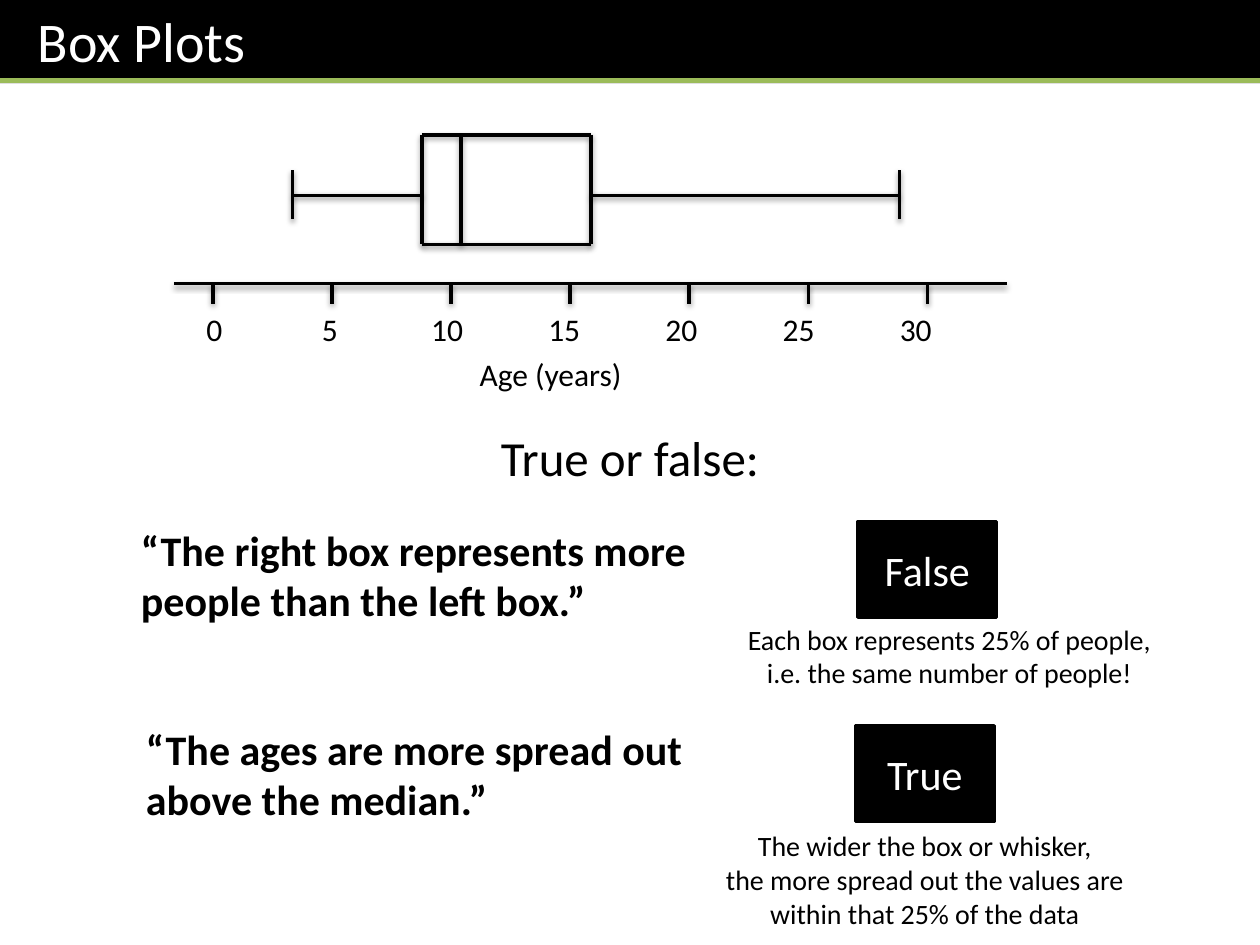
from typing import NamedTuple

from lxml.etree import SubElement
from pptx import Presentation
from pptx.dml.color import RGBColor
from pptx.enum.shapes import MSO_CONNECTOR, MSO_SHAPE
from pptx.enum.text import MSO_ANCHOR, PP_ALIGN
from pptx.oxml.ns import qn
from pptx.util import Inches, Pt

BLACK, WHITE, GREEN = "000000", "FFFFFF", "9BBB59"
AXIS_Y, TICK_BOTTOM = 2.25, 2.41
TICK_LEFT, TICK_STEP = 1.69, 0.945
LABEL_STEP = 0.93
BOX_TOP, BOX_BOTTOM, WHISKER_Y = 1.07, 1.94, 1.55
LOW, Q1, MEDIAN, Q3, HIGH = 2.32, 3.35, 3.66, 4.69, 7.14


class Box(NamedTuple):
    left: float
    top: float
    width: float
    height: float


class Question(NamedTuple):
    claim: str
    claim_box: Box
    answer: str
    answer_box: Box
    reason: str
    reason_box: Box


QUESTIONS = [
    Question("“The right box represents more people than the left box.”",
             Box(1.02, 4.11, 4.69, 0.91),
             "False", Box(6.81, 4.14, 1.1, 0.76),
             "Each box represents 25% of people, i.e. the same number of people!",
             Box(5.75, 4.89, 3.57, 0.64)),
    Question("“The ages are more spread out above the median.”",
             Box(1.06, 5.69, 4.69, 0.91),
             "True", Box(6.79, 5.76, 1.1, 0.76),
             "The wider the box or whisker,\n"
             "the more spread out the values are\n"
             "within that 25% of the data",
             Box(4.75, 6.53, 5.18, 0.91)),
]


def rgb(value: str) -> RGBColor:
    return RGBColor.from_string(value)


def add_line(shapes, x1: float, y1: float, x2: float, y2: float, *,
             color: str = BLACK, width: float = 2, shadow: bool = True):
    line = shapes.add_connector(MSO_CONNECTOR.STRAIGHT, Inches(x1), Inches(y1),
                                Inches(x2), Inches(y2))
    line.line.color.rgb = rgb(color)
    line.line.width = Pt(width)
    effects = SubElement(line._element.spPr, qn("a:effectLst"))
    if shadow:
        outer = SubElement(effects, qn("a:outerShdw"), blurRad=str(Pt(3.1)),
                           dist=str(Pt(1.6)), dir="5400000", rotWithShape="0")
        shade = SubElement(outer, qn("a:srgbClr"), val=BLACK)
        SubElement(shade, qn("a:alpha"), val="38000")
    return line


def add_text(shapes, text: str, box: Box, *, size: float, color: str = BLACK,
             bold: bool = False, align=PP_ALIGN.LEFT, anchor=MSO_ANCHOR.TOP,
             fill: str | None = None, outline: str | None = None,
             inset: float = 0.1):
    """Add text in a plain box, or in a rectangle when a fill is given."""
    place = [Inches(n) for n in box]
    if fill:
        sp = shapes.add_shape(MSO_SHAPE.RECTANGLE, *place)
        sp.shadow.inherit = False
        sp.fill.solid()
        sp.fill.fore_color.rgb = rgb(fill)
        if outline:
            sp.line.color.rgb = rgb(outline)
            sp.line.width = Pt(2)
        else:
            sp.line.fill.background()
    else:
        sp = shapes.add_textbox(*place)
    tf = sp.text_frame
    tf.word_wrap = True
    tf.vertical_anchor = anchor
    tf.margin_left = Inches(inset)
    for i, content in enumerate(text.split("\n")):
        p = tf.paragraphs[0] if i == 0 else tf.add_paragraph()
        p.alignment = align
        r = p.add_run()
        r.text = content
        r.font.name = "Calibri"
        r.font.size = Pt(size)
        r.font.bold = bold
        r.font.color.rgb = rgb(color)
    return sp


def add_header(shapes) -> None:
    header = shapes.add_group_shape().shapes
    add_text(header, "Box Plots", Box(0, 0, 10, 0.66), size=32, color=WHITE,
             fill=BLACK, inset=0.3)
    add_line(header, 0, 0.64, 10, 0.64, color=GREEN, width=3, shadow=False)


def add_axis(shapes) -> None:
    add_line(shapes, 1.38, AXIS_Y, 7.99, AXIS_Y)
    values = range(0, 31, 5)
    ticks = shapes.add_group_shape().shapes
    for i in range(len(values)):
        x = TICK_LEFT + i * TICK_STEP
        add_line(ticks, x, TICK_BOTTOM, x, AXIS_Y)

    labels = add_text(shapes, "\t".join(map(str, values)),
                      Box(1.54, 2.41, 6.3, 0.4), size=18)
    tabs = SubElement(labels.text_frame.paragraphs[0]._p.get_or_add_pPr(),
                      qn("a:tabLst"))
    for i in range(1, len(values)):
        SubElement(tabs, qn("a:tab"), pos=str(Inches(0.05 + i * LABEL_STEP)),
                   algn="ctr")
    add_text(shapes, "Age (years)", Box(2.4, 2.77, 3.94, 0.4), size=18,
             align=PP_ALIGN.CENTER)


def add_box_plot(shapes) -> None:
    for x in (LOW, HIGH):
        add_line(shapes, x, 1.35, x, 1.74)
    for x in (MEDIAN, Q1, Q3):
        add_line(shapes, x, BOX_TOP, x, BOX_BOTTOM)
    for y in (BOX_TOP, BOX_BOTTOM):
        add_line(shapes, Q1, y, Q3, y)
    for start, end in ((LOW, Q1), (Q3, HIGH)):
        add_line(shapes, start, WHISKER_Y, end, WHISKER_Y)


def add_question(shapes, q: Question) -> None:
    add_text(shapes, q.claim, q.claim_box, size=24, bold=True, fill=WHITE)
    add_text(shapes, q.answer, q.answer_box, size=24, color=WHITE, fill=BLACK,
             outline=BLACK, align=PP_ALIGN.CENTER, anchor=MSO_ANCHOR.MIDDLE)
    add_text(shapes, q.reason, q.reason_box, size=16, align=PP_ALIGN.CENTER)


def main() -> None:
    prs = Presentation()
    prs.slide_width, prs.slide_height = Inches(10), Inches(7.5)
    s = prs.slides.add_slide(prs.slide_layouts[6])
    add_header(s.shapes)
    add_axis(s.shapes)
    add_box_plot(s.shapes)
    add_text(s.shapes, "True or false:", Box(0, 3.34, 10, 0.57), size=28,
             align=PP_ALIGN.CENTER)
    for question in QUESTIONS:
        add_question(s.shapes, question)
    prs.save("out.pptx")


if __name__ == "__main__":
    main()
